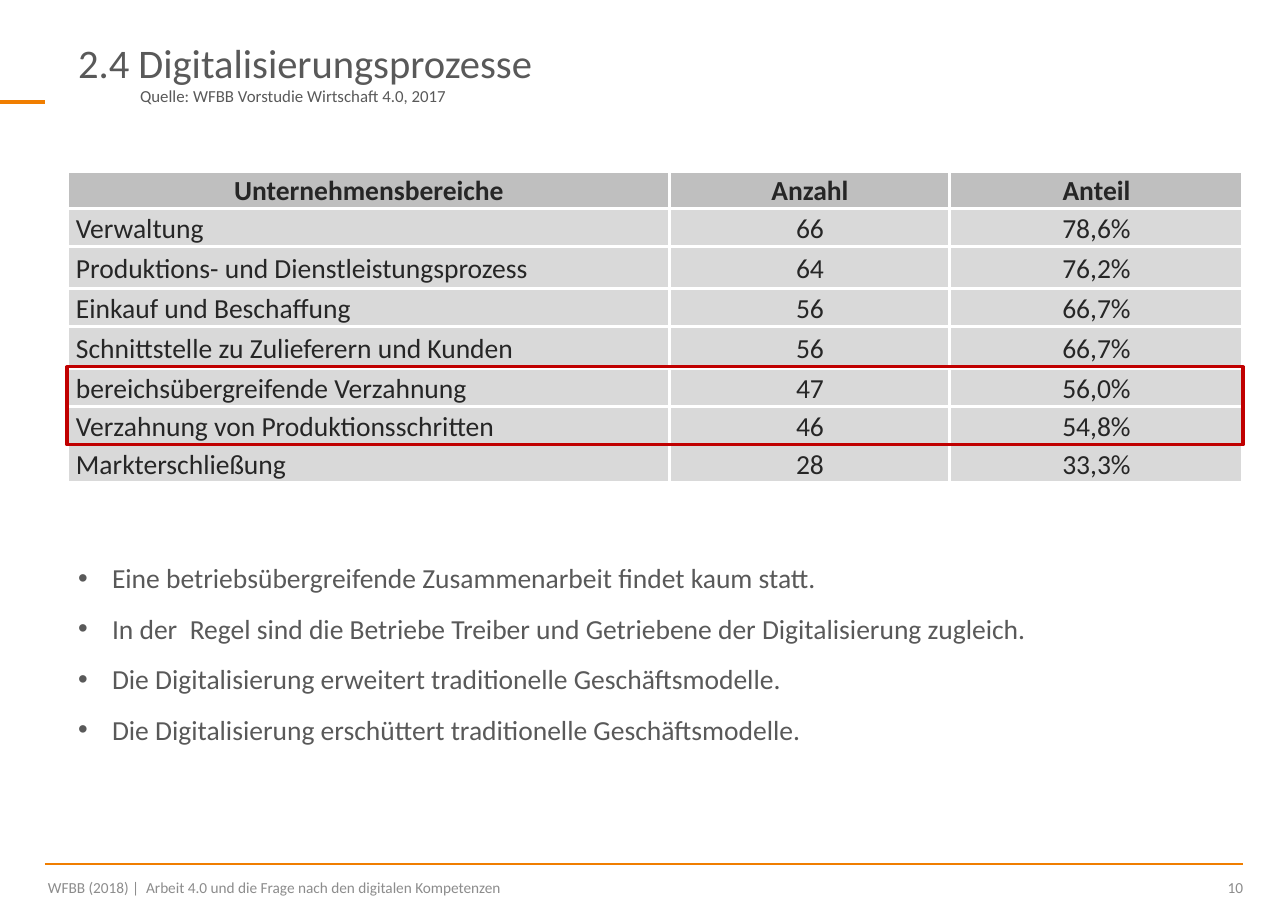
from dataclasses import dataclass

from lxml import etree
from pptx import Presentation
from pptx import util as u
from pptx.dml.color import RGBColor
from pptx.enum import shapes, text
from pptx.oxml import ns

PX = 8298  # EMU per px
LEFT, CENTER, RIGHT = (text.PP_ALIGN.LEFT, text.PP_ALIGN.CENTER,
                       text.PP_ALIGN.RIGHT)


@dataclass(frozen=True)
class Theme:
    font: str = "Calibri"
    body: str = "595959"
    dark: str = "262626"
    pale: str = "8C8C8C"
    accent: str = "F07E00"
    alert: str = "C00000"
    head: str = "BFBFBF"
    cell: str = "D9D9D9"
    grid: str = "FFFFFF"
    title: float = 26.5
    text: float = 18
    source: float = 11
    foot: float = 10


def put(obj, vals):
    for name, val in vals.items():
        setattr(obj, name, val)


def rgb(color):
    return RGBColor.from_string(color)


def add(parent, tag, **attrs):
    return etree.SubElement(parent, ns.qn(tag), attrs)


class Deck:
    def __init__(self, theme, wide, high):
        self.theme = theme
        self.prs = Presentation()
        put(self.prs, {"slide_width": wide * PX, "slide_height": high * PX})
        self.slide = self.prs.slides.add_slide(self.prs.slide_layouts[6])
        self.shapes = self.slide.shapes

    def label(self, para, words, size, color, bold=False, **form):
        put(para, form)
        run = para.add_run()
        run.text = words
        put(run.font, {"name": self.theme.font, "size": u.Pt(size),
                       "bold": bold})
        run.font.color.rgb = rgb(color)

    def line(self, x1, x2, y, width):
        rule = self.shapes.add_connector(
            shapes.MSO_CONNECTOR.STRAIGHT, x1 * PX, y * PX, x2 * PX, y * PX)
        rule.line.color.rgb = rgb(self.theme.accent)
        rule.line.width = u.Pt(width)
        add(rule._element.spPr, "a:effectLst")

    def box(self, area, lines, size, color, insets=(11, 6, 11, 6),
            bullet=False, **form):
        frame = self.shapes.add_textbox(*(n * PX for n in area)).text_frame
        sides = ("margin_left", "margin_top", "margin_right", "margin_bottom")
        put(frame, {side: n * PX for side, n in zip(sides, insets)})
        frame.word_wrap = True
        for i, words in enumerate(lines):
            para = frame.add_paragraph() if i else frame.paragraphs[0]
            if bullet:
                self.bullet(para)
            self.label(para, words, size, color, **form)

    def bullet(self, para, indent=34):
        props = para._p.get_or_add_pPr()
        props.set("marL", str(indent * PX))
        props.set("indent", str(-indent * PX))
        add(props, "a:buFont", typeface="Arial")
        add(props, "a:buChar", char="•")

    def border(self, cell):
        props = cell._tc.get_or_add_tcPr()
        for side in "LRTB":
            edge = add(props, f"a:ln{side}", w=str(u.Pt(2.25)))
            add(add(edge, "a:solidFill"), "a:srgbClr", val=self.theme.grid)

    def table(self, x, y, cols, rows, data):
        look = self.theme
        grid = self.shapes.add_table(
            len(rows), len(cols), x * PX, y * PX,
            sum(cols) * PX, sum(rows) * PX).table
        put(grid, {"first_row": False, "horz_banding": False})
        for col, wide in zip(grid.columns, cols):
            col.width = wide * PX
        for r, (high, values) in enumerate(zip(rows, data)):
            grid.rows[r].height = high * PX
            for c, words in enumerate(values):
                cell = grid.cell(r, c)
                put(cell, {"margin_left": 8 * PX, "margin_right": 8 * PX,
                           "margin_top": 0, "margin_bottom": 0,
                           "vertical_anchor": text.MSO_ANCHOR.MIDDLE})
                self.border(cell)
                cell.fill.solid()
                cell.fill.fore_color.rgb = rgb(look.cell if r else look.head)
                self.label(cell.text_frame.paragraphs[0], words, look.text,
                           look.dark, bold=r == 0, line_spacing=1.07,
                           alignment=LEFT if r and not c else CENTER)

    def frame(self, *area):
        rect = self.shapes.add_shape(
            shapes.MSO_SHAPE.RECTANGLE, *(n * PX for n in area))
        rect.shadow.inherit = False
        rect.fill.background()
        rect.line.color.rgb = rgb(self.theme.alert)
        rect.line.width = u.Pt(2)


AREAS = [
    ("Unternehmensbereiche", "Anzahl", "Anteil"),
    ("Verwaltung", "66", "78,6%"),
    ("Produktions- und Dienstleistungsprozess", "64", "76,2%"),
    ("Einkauf und Beschaffung", "56", "66,7%"),
    ("Schnittstelle zu Zulieferern und Kunden", "56", "66,7%"),
    ("bereichsübergreifende Verzahnung", "47", "56,0%"),
    ("Verzahnung von Produktionsschritten", "46", "54,8%"),
    ("Markterschließung", "28", "33,3%"),
]
POINTS = [
    "Eine betriebsübergreifende Zusammenarbeit findet kaum statt.",
    "In der  Regel sind die Betriebe Treiber und Getriebene der "
    "Digitalisierung zugleich.",
    "Die Digitalisierung erweitert traditionelle Geschäftsmodelle.",
    "Die Digitalisierung erschüttert traditionelle Geschäftsmodelle.",
]


def main():
    look = Theme()
    deck = Deck(look, 1288, 911)

    # Rules and footer
    deck.line(0, 45, 102, 2)
    deck.line(45, 1243, 864, 1)
    deck.box((45, 865, 1121, 45),
             ["WFBB (2018) |  Arbeit 4.0 und die Frage nach den digitalen "
              "Kompetenzen"], look.foot, look.pale, (3, 13, 0, 0))
    deck.box((1166, 865, 77, 45), ["10"], look.foot, look.pale,
             (0, 13, 0, 0), alignment=RIGHT)

    # Title and source
    deck.box((67, 32, 864, 61), ["2.4 Digitalisierungsprozesse"],
             look.title, look.body)
    deck.box((129, 80, 639, 32),
             ["Quelle: WFBB Vorstudie Wirtschaft 4.0, 2017"],
             look.source, look.body)

    # Table of business areas
    rows = [42 if r in (2, 4) else 38 for r in range(len(AREAS))]
    deck.table(68, 171, [602, 280, 293], rows, AREAS)

    # Findings
    deck.box((67, 547, 1176, 206), POINTS, look.text, look.body, bullet=True,
             line_spacing=1.25, space_after=u.Pt(6))

    # Highlight around the two linkage rows
    deck.frame(67, 367, 1176, 78)

    deck.prs.save("out.pptx")


if __name__ == "__main__":
    main()
